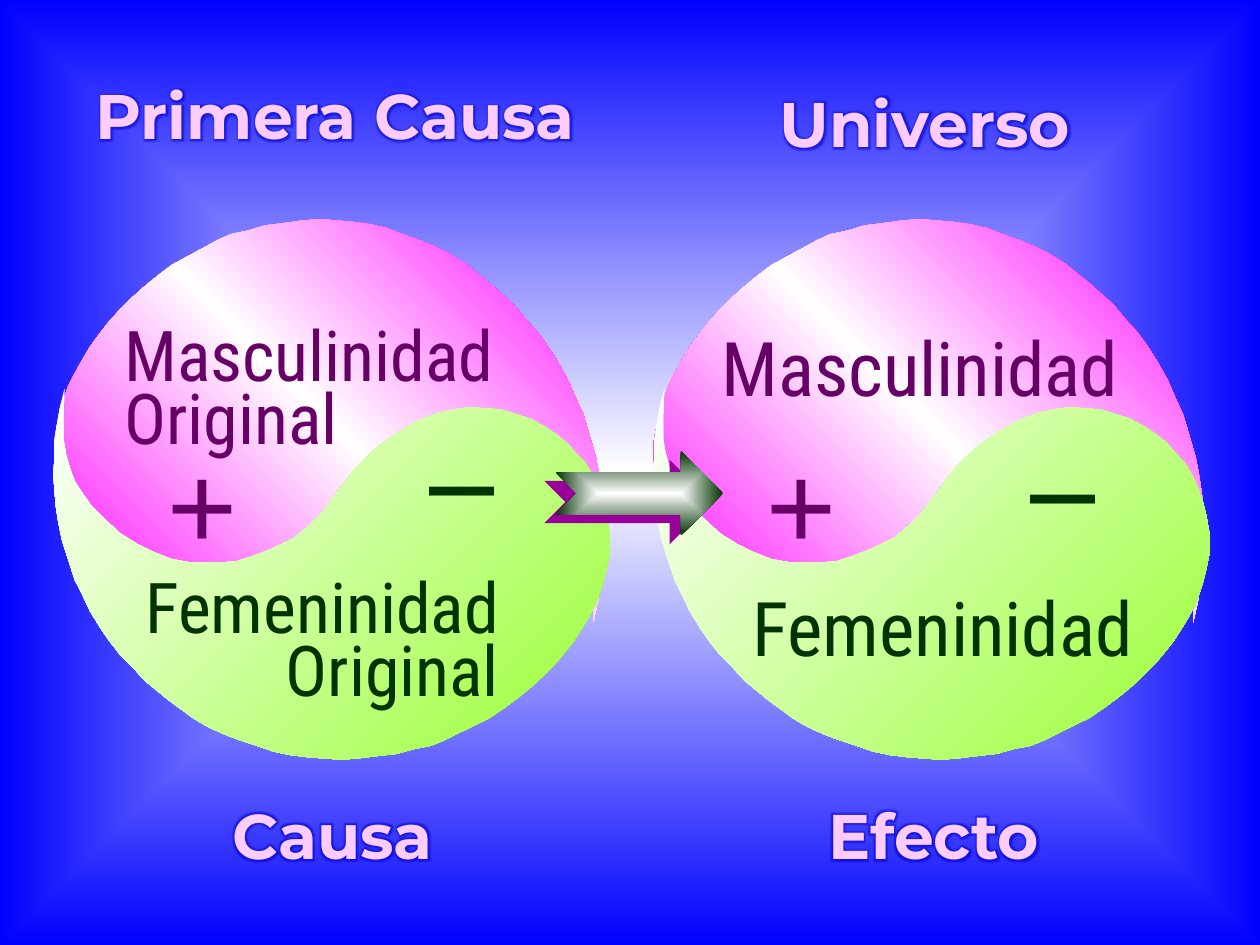
import pptx
import pptx.util
import pptx.dml.color
import pptx.enum.shapes
import pptx.enum.text
import pptx.oxml
import pptx.oxml.ns

Inches = pptx.util.Inches
ALIGN = pptx.enum.text.PP_ALIGN
PURPLE, GREEN = "660066", "003300"
CONDENSED, HEADING, SERIF = "Roboto Condensed", "Montserrat", "Times New Roman"
COLUMN_STEP = 4.76
DEPTH_X, DEPTH_Y = -0.09, 0.07

MASCULINE_OUTLINE = [
    (2.34, 4.35), (2.44, 4.24), (2.52, 4.12), (2.69, 3.87), (2.8, 3.75), (2.91, 3.65),
    (3.08, 3.56), (3.22, 3.5), (3.36, 3.45), (3.49, 3.44), (3.61, 3.44), (3.72, 3.44),
    (3.87, 3.47), (4.01, 3.53), (4.14, 3.6), (4.27, 3.69), (4.41, 3.83), (4.5, 3.93),
    (4.57, 4.04), (4.63, 4.14), (4.67, 4.26), (4.7, 4.38), (4.72, 4.51), (4.72, 4.59),
    (4.72, 4.69), (4.71, 4.94), (4.75, 4.76), (4.77, 4.63), (4.79, 4.48), (4.79, 4.33),
    (4.8, 4.2), (4.79, 4.07), (4.78, 3.93), (4.76, 3.79), (4.73, 3.63), (4.68, 3.46),
    (4.63, 3.29), (4.57, 3.16), (4.51, 3.02), (4.42, 2.86), (4.35, 2.75), (4.27, 2.64),
    (4.17, 2.53), (4.08, 2.42), (3.99, 2.34), (3.89, 2.25), (3.79, 2.17), (3.69, 2.09),
    (3.58, 2.02), (3.46, 1.96), (3.34, 1.91), (3.2, 1.86), (3.07, 1.81), (2.94, 1.78),
    (2.79, 1.76), (2.67, 1.75), (2.54, 1.74), (2.41, 1.75), (2.26, 1.77), (2.1, 1.79),
    (1.97, 1.83), (1.83, 1.86), (1.72, 1.91), (1.61, 1.97), (1.5, 2.03), (1.37, 2.1),
    (1.25, 2.19), (1.14, 2.28), (1.04, 2.37), (0.95, 2.46), (0.86, 2.56), (0.79, 2.65),
    (0.71, 2.76), (0.64, 2.88), (0.59, 2.97), (0.54, 3.07), (0.51, 3.16), (0.48, 3.26),
    (0.45, 3.39), (0.43, 3.5), (0.43, 3.61), (0.43, 3.71), (0.45, 3.84), (0.48, 3.97),
    (0.52, 4.09), (0.56, 4.19), (0.62, 4.3), (0.69, 4.38), (0.76, 4.47), (0.85, 4.55),
    (0.95, 4.62), (1.05, 4.68), (1.16, 4.72), (1.28, 4.76), (1.4, 4.77), (1.52, 4.78),
    (1.66, 4.76), (1.78, 4.73), (1.9, 4.68), (2.01, 4.62), (2.11, 4.55), (2.23, 4.46),
]
FEMININE_OUTLINE = [(5.27 - 1.01 * x, 7.63 - 0.92 * y) for x, y in MASCULINE_OUTLINE]


def color(value):
    return pptx.dml.color.RGBColor.from_string(value)


def set_gradient(owner, fill, stops, angle=None, path="rect"):
    fill.background()
    stop_xml = "".join(
        f'<a:gs pos="{position * 1000}"><a:srgbClr val="{value}"/></a:gs>'
        for position, value in stops
    )
    if angle is None:
        direction = (f'<a:path path="{path}"><a:fillToRect l="50000" t="50000" '
                     'r="50000" b="50000"/></a:path>')
    else:
        direction = f'<a:lin ang="{angle * 60000}" scaled="0"/>'
    gradient = pptx.oxml.parse_xml(
        f'<a:gradFill {pptx.oxml.ns.nsdecls("a")} rotWithShape="1">'
        f"<a:gsLst>{stop_xml}</a:gsLst>{direction}</a:gradFill>"
    )
    empty_fill = next(owner.element.iter(pptx.oxml.ns.qn("a:noFill")))
    empty_fill.getparent().replace(empty_fill, gradient)


def add_half(slide, outline, shift, stops, angle):
    points = [(Inches(x + shift), Inches(y)) for x, y in outline]
    builder = slide.shapes.build_freeform(*points[0])
    builder.add_line_segments(points[1:], close=True)
    shape = builder.convert_to_shape()
    shape.shadow.inherit = False
    set_gradient(shape, shape.fill, stops, angle)
    shape.line.fill.background()


def add_text(slide, box, lines, size, font_name, font_color,
             alignment=ALIGN.CENTER, bold=False, spacing=None, grow=True):
    shape = slide.shapes.add_textbox(*map(Inches, box))
    frame = shape.text_frame
    frame.word_wrap = False
    if grow:
        frame.auto_size = pptx.enum.text.MSO_AUTO_SIZE.SHAPE_TO_FIT_TEXT
    frame.text = "\n".join(lines)
    for paragraph in frame.paragraphs:
        paragraph.alignment = alignment
        paragraph.line_spacing = spacing
        paragraph.font.size = pptx.util.Pt(size)
        paragraph.font.name = font_name
        paragraph.font.bold = bold
        paragraph.font.color.rgb = color(font_color)
    return shape


def add_heading(slide, box, text):
    shape = add_text(slide, box, [text], 36, HEADING, "FFCCFF", bold=True, grow=False)
    shape.text_frame.paragraphs[0].runs[0].font.color.rgb = color("FFCCFF")
    glow = pptx.oxml.parse_xml(
        f'<a:effectLst {pptx.oxml.ns.nsdecls("a")}><a:glow rad="63500">'
        '<a:srgbClr val="0000CC"><a:alpha val="60000"/></a:srgbClr></a:glow></a:effectLst>'
    )
    next(shape.element.iter(pptx.oxml.ns.qn("a:rPr"))).append(glow)


def add_arrow(slide, left, top):
    arrow = slide.shapes.add_shape(
        pptx.enum.shapes.MSO_SHAPE.NOTCHED_RIGHT_ARROW,
        Inches(left), Inches(top), Inches(1.33), Inches(0.67))
    arrow.shadow.inherit = False
    arrow.line.fill.background()
    return arrow


def add_deep_arrow(slide, left, top):
    side = add_arrow(slide, left + DEPTH_X, top + DEPTH_Y)
    side.fill.solid()
    side.fill.fore_color.rgb = color("990099")
    front = add_arrow(slide, left, top)
    set_gradient(front, front.fill, [(0, "FFFFFF"), (100, "003300")])


def main():
    presentation = pptx.Presentation()
    presentation.slide_width = Inches(10)
    presentation.slide_height = Inches(7.5)
    slide = presentation.slides.add_slide(presentation.slide_layouts[6])
    set_gradient(slide, slide.background.fill, [(0, "FFFFFF"), (100, "0000FF")], path="shape")

    for shift in (0, COLUMN_STEP):
        add_half(slide, MASCULINE_OUTLINE, shift,
                 [(0, "FF00FF"), (50, "FFFFFF"), (100, "FF00FF")], 315)
        add_half(slide, FEMININE_OUTLINE, shift, [(0, "FFFFFF"), (100, "99FF33")], 45)
        add_text(slide, (1.22 + shift, 3.33, 0.77, 1.3), ["+"], 72, SERIF, PURPLE,
                 ALIGN.LEFT, bold=True)

    for left, top in ((3.32, 2.75), (8.09, 2.81)):
        add_text(slide, (left, top, 0.7, 1.3), ["_"], 72, SERIF, GREEN,
                 ALIGN.LEFT, bold=True)

    for box, lines, size, font_color, alignment in (
        ((0.86, 4.58, 3.2, 1.11), ["Femeninidad", "Original"], 40, GREEN, ALIGN.RIGHT),
        ((0.89, 2.58, 3.34, 1.11), ["Masculinidad", "Original"], 40, PURPLE, ALIGN.LEFT),
        ((5.77, 4.73, 3.42, 0.64), ["Femeninidad"], 43, GREEN, ALIGN.CENTER),
        ((5.51, 2.67, 3.58, 0.64), ["Masculinidad"], 43, PURPLE, ALIGN.CENTER),
    ):
        add_text(slide, box, lines, size, CONDENSED, font_color, alignment, spacing=0.75)

    for box, text in (
        ((0.51, 0.56, 4.3, 0.79), "Primera Causa"),
        ((5.73, 0.62, 3.22, 0.71), "Universo"),
        ((1.03, 6.27, 3.22, 0.71), "Causa"),
        ((5.8, 6.27, 3.22, 0.71), "Efecto"),
    ):
        add_heading(slide, box, text)

    add_deep_arrow(slide, 4.41, 3.58)
    presentation.save("out.pptx")


if __name__ == "__main__":
    main()
